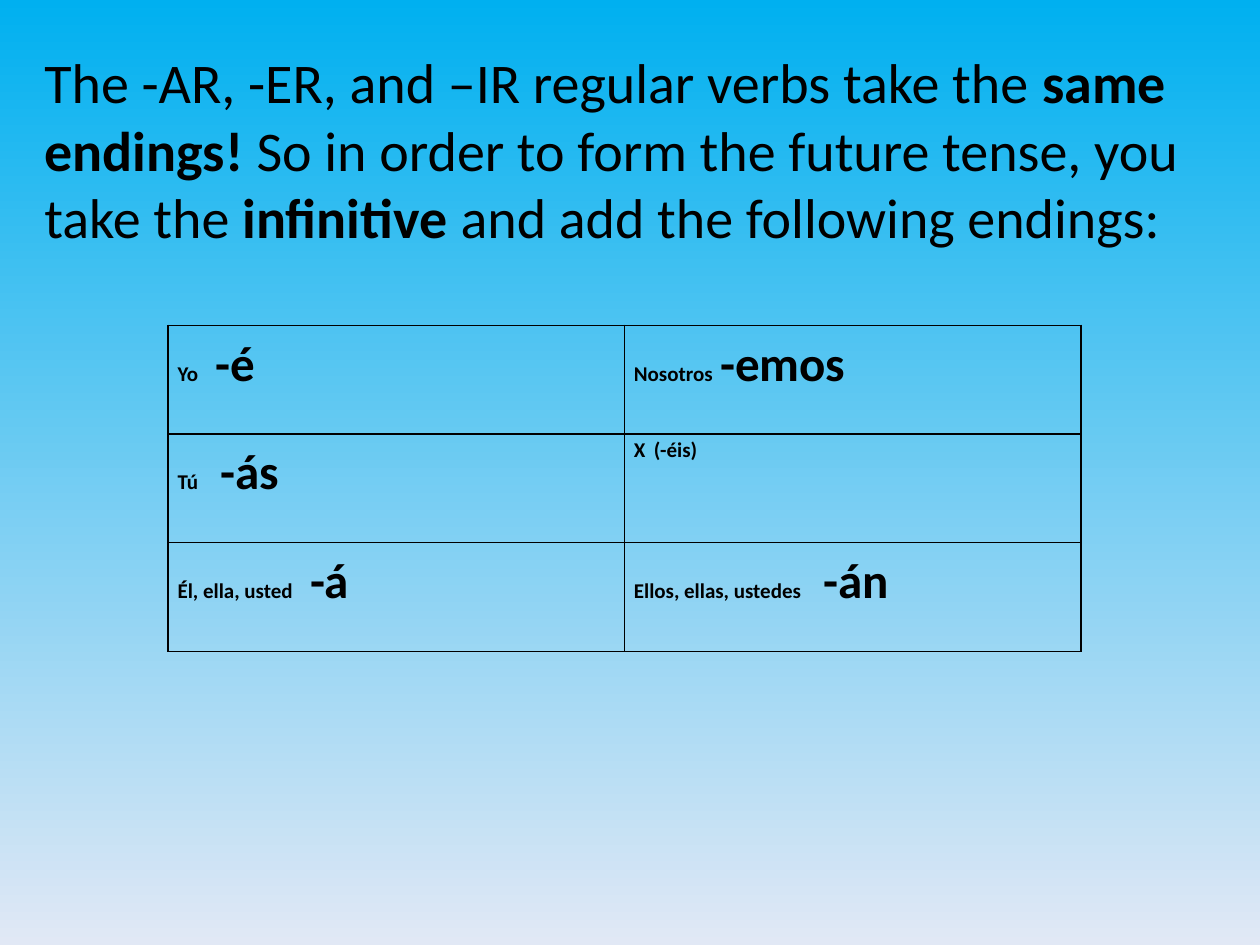
from lxml import etree
from pptx import Presentation
from pptx.dml.color import RGBColor
from pptx.oxml.ns import qn
from pptx.util import Cm, Pt

BLACK = "000000"
SKY = "00B0F0"
PALE = "E1E8F5"


def rgb(value):
    return RGBColor.from_string(value)


def add_run(para, text, size, bold):
    span = para.add_run()
    span.text = text
    span.font.name = "Calibri"
    span.font.size = Pt(size)
    span.font.bold = bold
    span.font.color.rgb = rgb(BLACK)


deck = Presentation()
deck.slide_width, deck.slide_height = Cm(25.4), Cm(19.05)
page = deck.slides.add_slide(deck.slide_layouts.get_by_name("Title and Content"))
title = page.shapes.title
title.element.getparent().remove(title.element)

# Background
fill = page.background.fill
fill.gradient()
fill.gradient_angle = 270
for stop, position, color in zip(fill.gradient_stops, (0, 1), (SKY, PALE)):
    stop.position = position
    stop.color.rgb = rgb(color)

# Explanation
body = page.placeholders[1]
body.left, body.top, body.width, body.height = Cm(0.64), Cm(0.84), Cm(23.5), Cm(16.18)
para = body.text_frame.paragraphs[0]
properties = para._p.get_or_add_pPr()
properties.set("marL", "0")
properties.set("indent", "0")
etree.SubElement(properties, qn("a:buNone"))
for text, bold in [
    ("The -AR, -ER, and –IR regular verbs take the ", False),
    ("same endings! ", True),
    ("So in order to form the future tense, you take the", False),
    (" infinitive", True),
    (" and add the following endings:", False),
]:
    add_run(para, text, 32, bold)

# Endings: pronoun, ending, ending size, tab position in cm
ENDINGS = [
    [("Yo", "-é", 28, 0.76), ("Nosotros", "-emos", 28, 1.74)],
    [("Tú", "-ás", 28, 0.86), ("X", "(-éis)", 12, 0.4)],
    [("Él, ella, usted", "-á", 28, 2.67), ("Ellos, ellas, ustedes", "-án", 28, 3.82)],
]
frame = page.shapes.add_table(3, 2, Cm(3.39), Cm(6.56), Cm(18.4), Cm(6.57))
table = frame.table
table.first_row = False
table.horz_banding = False
for row, endings in zip(table.rows, ENDINGS):
    row.height = Cm(2.19)
    for cell, (pronoun, ending, size, tab) in zip(row.cells, endings):
        cell.margin_left = cell.margin_right = Cm(0.19)
        cell.margin_top = cell.margin_bottom = 0
        cell.fill.background()
        cell_properties = cell._tc.get_or_add_tcPr()
        for index, side in enumerate(("lnL", "lnR", "lnT", "lnB")):
            line = etree.Element(qn(f"a:{side}"), w=str(Pt(1)))
            solid = etree.SubElement(line, qn("a:solidFill"))
            etree.SubElement(solid, qn("a:srgbClr"), val=BLACK)
            cell_properties.insert(index, line)

        para = cell.text_frame.paragraphs[0]
        para.line_spacing = 1.15
        tabs = etree.SubElement(para._p.get_or_add_pPr(), qn("a:tabLst"))
        etree.SubElement(tabs, qn("a:tab"), pos=str(Cm(tab)), algn="l")
        add_run(para, pronoun + "\t", 12, True)
        add_run(para, ending, size, True)

deck.save("out.pptx")
